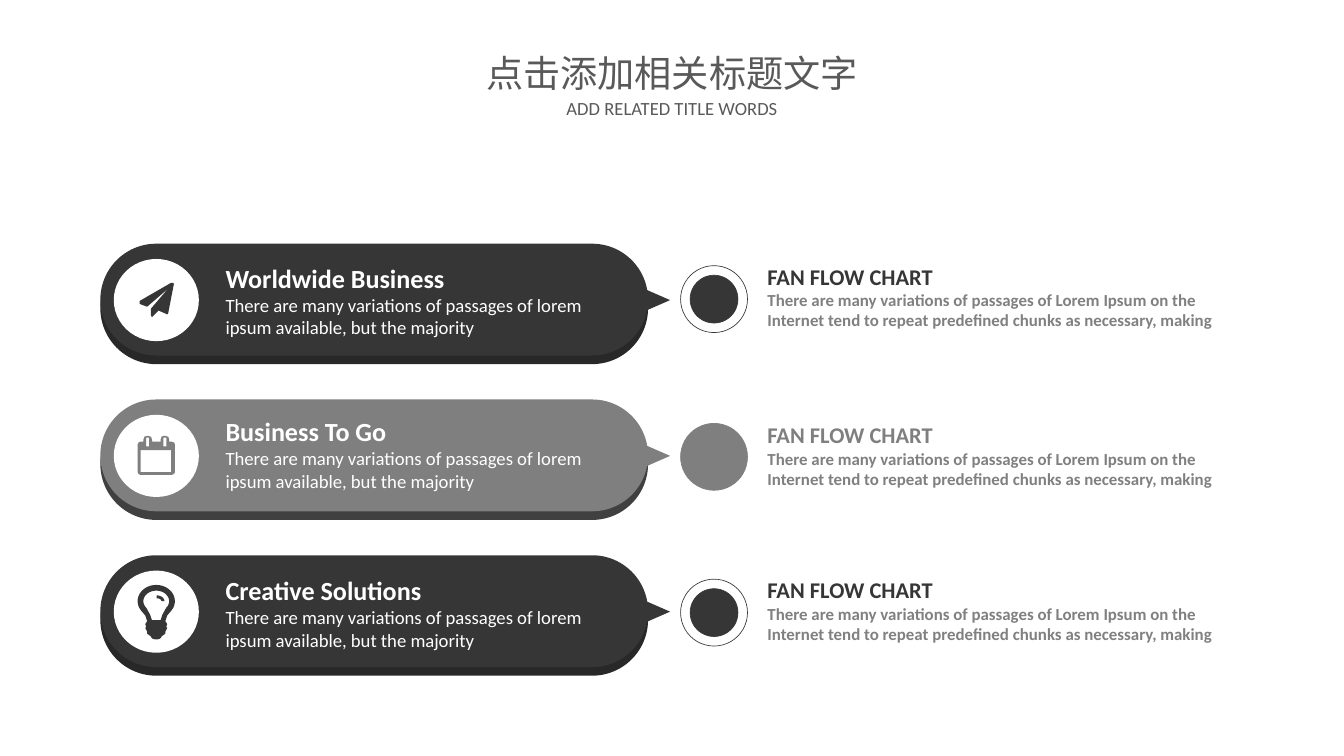
from dataclasses import dataclass
from math import cos, radians, sin

from pptx import Presentation
from pptx.dml.color import RGBColor
from pptx.enum.shapes import MSO_SHAPE
from pptx.enum.text import MSO_ANCHOR, PP_ALIGN
from pptx.util import Inches, Pt


@dataclass(frozen=True)
class Theme:
    font: str = "Calibri"
    white: str = "FFFFFF"
    dark: str = "363636"
    dark_edge: str = "282828"
    grey: str = "7F7F7F"
    grey_edge: str = "404040"
    title_text: str = "595959"
    body_text: str = "808080"
    title_size: float = 28
    subtitle_size: float = 14
    heading_size: float = 19.7
    summary_size: float = 14.1
    label_size: float = 16.9
    detail_size: float = 12.7
    outline: float = 0.5


@dataclass(frozen=True)
class Row:
    """One banner; the drops are distances below the banner's top edge."""
    heading: str
    color: str
    edge: str
    ring: str
    icon: list
    icon_left: float
    icon_drop: float
    heading_drop: float
    label_drop: float
    dot_drop: float


def arc(x, y, width, height, start, end, steps=24):
    """Points on an ellipse given by centre and radii, angles in degrees."""
    angles = [radians(start + (end - start) * step / steps) for step in range(steps + 1)]
    return [(x + width * cos(angle), y + height * sin(angle)) for angle in angles]


def rectangle(left, top, right, bottom):
    return [(left, top), (right, top), (right, bottom), (left, bottom)]


# Icon contours are in hundredths of an inch.
PLANE = [[(36, 1), (30, 32), (29, 33), (20, 29), (14, 35), (13, 36), (12, 34),
          (12, 27), (30, 6), (8, 25), (0, 22), (0, 19), (33, 0), (35, 0)]]
CALENDAR = [
    [(0, 9), (1, 7), (3, 6), (6, 6), (6, 4), (7, 1), (10, 0), (11, 0), (14, 1),
     (15, 4), (15, 6), (24, 6), (24, 4), (25, 1), (27, 0), (29, 0), (32, 1),
     (33, 4), (33, 6), (35, 6), (38, 7), (39, 9), (39, 38), (38, 40), (35, 41),
     (3, 41), (1, 40), (0, 38)],
    rectangle(3, 15, 35, 38),
    rectangle(9, 2, 12, 11),
    rectangle(27, 2, 30, 11),
]
BULB = [
    arc(19.5, 17, 19.5, 17, 145, 395)
    + [(31, 32), (29, 38), (31, 41), (30, 44), (31, 45), (29, 49), (29, 51), (25, 54)]
    + arc(19.5, 54, 5.5, 3, 0, 180)
    + [(10, 51), (10, 49), (8, 45), (9, 44), (8, 41), (10, 38), (8, 32)],
    arc(19.5, 17, 13.5, 11, 140, 400) + [(26, 31), (24, 37), (15, 37), (13, 31)],
    arc(20, 17, 8, 6, 270, 360) + arc(20, 17, 5, 3, 360, 270),
]


class Painter:
    def __init__(self, page, theme):
        self.page = page
        self.theme = theme

    def paint(self, shape, fill, line=None):
        shape.shadow.inherit = False
        shape.fill.solid()
        shape.fill.fore_color.rgb = RGBColor.from_string(fill)
        if line:
            shape.line.color.rgb = RGBColor.from_string(line)
            shape.line.width = Pt(self.theme.outline)
        else:
            shape.line.fill.background()
        return shape

    def shape(self, kind, area, fill, line=None):
        shape = self.page.shapes.add_shape(kind, *map(Inches, area))
        return self.paint(shape, fill, line)

    def icon(self, left, top, contours, fill):
        """Draw one shape; the inner contours become holes."""
        builder = None
        for contour in contours:
            points = [(Inches(x / 100), Inches(y / 100)) for x, y in contour]
            if builder is None:
                builder = self.page.shapes.build_freeform(*points[0])
            else:
                builder.move_to(*points[0])
            builder.add_line_segments(points[1:], close=True)
        self.paint(builder.convert_to_shape(Inches(left), Inches(top)), fill)

    def text(self, area, lines, inset=(0, 0), wrap=True,
             anchor=MSO_ANCHOR.TOP, align=PP_ALIGN.LEFT):
        """Each line is (words, size, color, bold) and makes one paragraph."""
        frame = self.page.shapes.add_textbox(*map(Inches, area)).text_frame
        side, edge = map(Inches, inset)
        settings = {"margin_left": side, "margin_right": side, "margin_top": edge,
                    "margin_bottom": edge, "word_wrap": wrap, "vertical_anchor": anchor}
        for name, value in settings.items():
            setattr(frame, name, value)
        for index, (words, size, color, bold) in enumerate(lines):
            para = frame.add_paragraph() if index else frame.paragraphs[0]
            para.alignment = align
            span = para.add_run()
            span.text = words
            span.font.color.rgb = RGBColor.from_string(color)
            for name, value in {"name": self.theme.font, "size": Pt(size), "bold": bold}.items():
                setattr(span.font, name, value)

    def banner(self, top, row):
        theme = self.theme
        for drop, fill in ((0.09, row.edge), (0, row.color)):
            pill = self.shape(MSO_SHAPE.ROUNDED_RECTANGLE, (1.05, top + drop, 5.73, 1.17), fill)
            pill.adjustments[0] = 0.5
        pointer = self.shape(MSO_SHAPE.ISOSCELES_TRIANGLE, (6.71, top + 0.43, 0.28, 0.32), row.color)
        pointer.rotation = 90
        self.shape(MSO_SHAPE.OVAL, (1.19, top + 0.16, 0.89, 0.86), theme.white)
        self.icon(row.icon_left, top + row.icon_drop, row.icon, row.color)
        heading_top = top + row.heading_drop
        self.text((2.36, heading_top, 4.03, 0.33),
                  [(row.heading, theme.heading_size, theme.white, True)],
                  anchor=MSO_ANCHOR.MIDDLE)
        summary = "There are many variations of passages of lorem ipsum available, but the majority"
        self.text((2.36, heading_top + 0.33, 4.03, 0.47),
                  [(summary, theme.summary_size, theme.white, False)])

    def fan_label(self, top, row):
        theme = self.theme
        dot_top = top + row.dot_drop
        self.shape(MSO_SHAPE.OVAL, (7.12, dot_top, 0.7, 0.7), row.ring, row.color)
        self.shape(MSO_SHAPE.OVAL, (7.22, dot_top + 0.1, 0.5, 0.5), row.color, row.color)
        detail = ("There are many variations of passages of Lorem Ipsum on the "
                  "Internet tend to repeat predefined chunks as necessary, making")
        self.text((7.93, top + row.label_drop, 5.08, 0.81),
                  [("FAN FLOW CHART", theme.label_size, row.color, True),
                   (detail, theme.detail_size, theme.body_text, True)],
                  inset=(0.1, 0.05))


def main():
    theme = Theme()
    deck = Presentation()
    deck.slide_width, deck.slide_height = Inches(14.06), Inches(7.91)
    painter = Painter(deck.slides.add_slide(deck.slide_layouts[6]), theme)

    rows = [
        Row("Worldwide Business", theme.dark, theme.dark_edge, theme.white,
            PLANE, 1.46, 0.41, 0.19, 0.15, 0.23),
        Row("Business To Go", theme.grey, theme.grey_edge, theme.grey,
            CALENDAR, 1.44, 0.38, 0.17, 0.18, 0.25),
        Row("Creative Solutions", theme.dark, theme.dark_edge, theme.white,
            BULB, 1.44, 0.31, 0.2, 0.17, 0.25),
    ]
    for index, row in enumerate(rows):
        top = 2.55 + 1.63 * index
        painter.banner(top, row)
        painter.fan_label(top, row)

    titles = [
        ((4.96, 0.48, 4.14, 0.58), "点击添加相关标题文字", theme.title_size),
        ((5.79, 0.97, 2.48, 0.34), "ADD RELATED TITLE WORDS", theme.subtitle_size),
    ]
    for area, words, size in titles:
        painter.text(area, [(words, size, theme.title_text, False)],
                     inset=(0.11, 0.05), wrap=False, align=PP_ALIGN.CENTER)
    deck.save("out.pptx")


if __name__ == "__main__":
    main()
